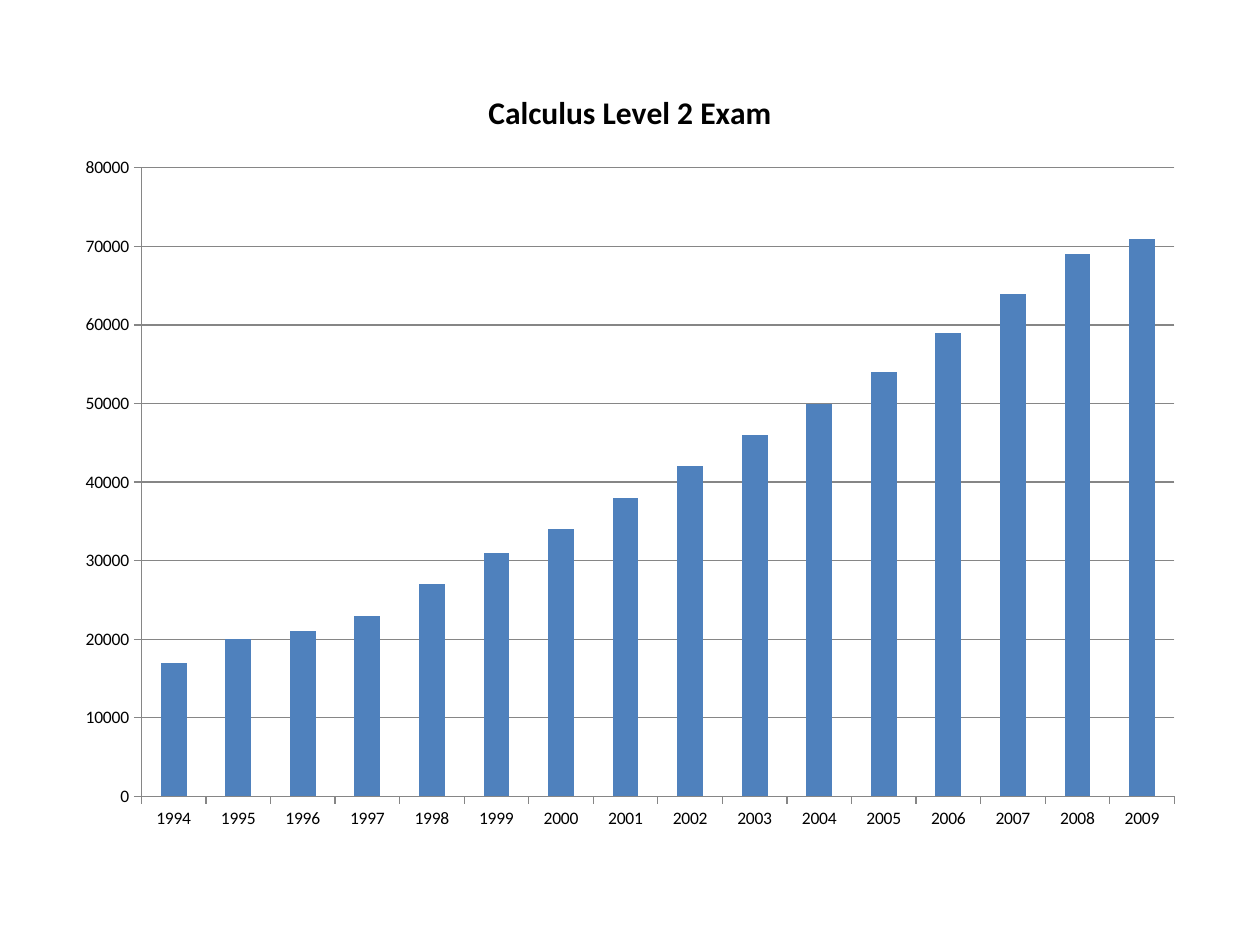
import pptx
import pptx.chart.data
import pptx.dml.color
import pptx.enum.chart
import pptx.util
from pptx.util import Inches

BLACK = pptx.dml.color.RGBColor(0x00, 0x00, 0x00)
BAR_BLUE = pptx.dml.color.RGBColor(0x4F, 0x81, 0xBD)
AXIS_GRAY = pptx.dml.color.RGBColor(0x86, 0x86, 0x86)

TITLE = "Calculus Level 2 Exam"
EXAMS_BY_YEAR = [
    17000, 20000, 21000, 23000, 27000, 31000, 34000, 38000,
    42000, 46000, 50000, 54000, 59000, 64000, 69000, 71000,
]

presentation = pptx.Presentation()
presentation.slide_width = Inches(10)
presentation.slide_height = Inches(7.5)
slide = presentation.slides.add_slide(presentation.slide_layouts[6])

exam_data = pptx.chart.data.CategoryChartData()
exam_data.categories = [str(1994 + i) for i in range(len(EXAMS_BY_YEAR))]
exam_data.add_series(TITLE, EXAMS_BY_YEAR)
chart = slide.shapes.add_chart(
    pptx.enum.chart.XL_CHART_TYPE.COLUMN_CLUSTERED,
    Inches(0.5), Inches(0.5), Inches(9), Inches(6.2), exam_data,
).chart
chart.has_legend = False
chart.font.name = "Calibri"
chart.font.size = pptx.util.Pt(10)
chart.font.color.rgb = BLACK

chart.has_title = True
heading = chart.chart_title.text_frame
heading.text = TITLE
heading_font = heading.paragraphs[0].runs[0].font
heading_font.name = "Calibri"
heading_font.size = pptx.util.Pt(18)
heading_font.bold = True
heading_font.color.rgb = BLACK

bars = chart.plots[0]
bars.gap_width = 150
bars.vary_by_categories = False
bars.series[0].format.fill.solid()
bars.series[0].format.fill.fore_color.rgb = BAR_BLUE

years, counts = chart.category_axis, chart.value_axis
counts.minimum_scale = 0
counts.maximum_scale = 80000
counts.major_unit = 10000
counts.has_major_gridlines = True
for axis in (years, counts):
    axis.major_tick_mark = pptx.enum.chart.XL_TICK_MARK.OUTSIDE
    axis.minor_tick_mark = pptx.enum.chart.XL_TICK_MARK.NONE
for line in (years.format.line, counts.format.line, counts.major_gridlines.format.line):
    line.color.rgb = AXIS_GRAY
    line.width = pptx.util.Pt(0.75)

presentation.save("out.pptx")
